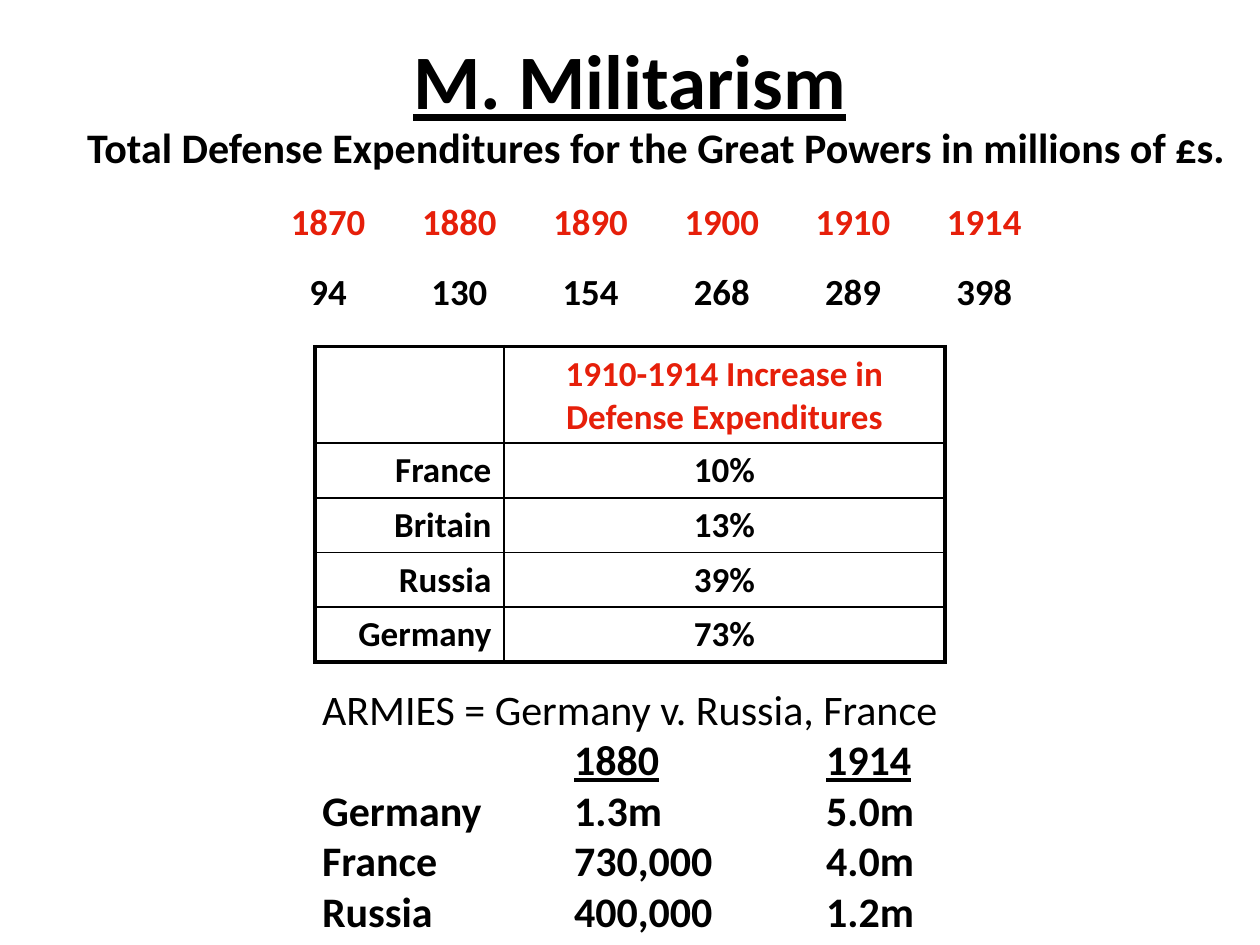
from dataclasses import dataclass

from lxml.etree import SubElement
from pptx import Presentation
from pptx.dml.color import RGBColor
from pptx.enum.text import MSO_ANCHOR as Anchor, MSO_AUTO_SIZE as AutoSize, PP_ALIGN as Align
from pptx.oxml import parse_xml
from pptx.oxml.ns import nsdecls, qn
from pptx.util import Pt


@dataclass(frozen=True)
class Theme:
    font: str = "Calibri"
    ink: str = "000000"
    accent: str = "E61F0A"
    title: float = 44
    body: float = 24
    years: float = 21
    table: float = 20
    outer_line: float = 2.25
    inner_line: float = 1


THEME = Theme()

SPENDING = [
    ("1870", "1880", "1890", "1900", "1910", "1914"),
    ("94", "130", "154", "268", "289", "398"),
]
INCREASE = [
    ("", "1910-1914 Increase in Defense Expenditures"),
    ("France", "10%"),
    ("Britain", "13%"),
    ("Russia", "39%"),
    ("Germany", "73%"),
]
ARMIES = [
    ("Germany", "1.3m", "5.0m"),
    ("France", "730,000", "4.0m"),
    ("Russia", "400,000", "1.2m"),
]


def add_run(paragraph, text, size, color=THEME.ink, bold=True, underline=False):
    run = paragraph.add_run()
    run.text = text
    font = run.font
    font.name, font.size = THEME.font, Pt(size)
    font.bold, font.underline = bold, underline
    font.color.rgb = RGBColor.from_string(color)


def add_text_frame(slide, box):
    frame = slide.shapes.add_textbox(*map(Pt, box)).text_frame
    frame.word_wrap = True
    frame.auto_size = AutoSize.SHAPE_TO_FIT_TEXT
    return frame


def add_plain_table(slide, box, widths, heights):
    """Add a table without style bands, sized by its columns and rows."""
    table = slide.shapes.add_table(len(heights), len(widths), *map(Pt, box)).table
    table.first_row = table.horz_banding = False
    for column, width in zip(table.columns, widths):
        column.width = Pt(width)
    for row, height in zip(table.rows, heights):
        row.height = Pt(height)
    for cell in table.iter_cells():
        cell.fill.background()
    return table


def set_borders(cell, widths):
    """Draw the left, right, top and bottom borders, in that order."""
    properties = cell._tc.get_or_add_tcPr()
    for index, (side, width) in enumerate(zip("LRTB", widths)):
        properties.insert(index, parse_xml(
            f'<a:ln{side} {nsdecls("a")} w="{Pt(width)}"><a:solidFill>'
            f'<a:srgbClr val="{THEME.ink}"/></a:solidFill></a:ln{side}>'))


def set_tab_stops(paragraph, positions):
    tabs = SubElement(paragraph._p.get_or_add_pPr(), qn("a:tabLst"))
    for position in positions:
        SubElement(tabs, qn("a:tab"), pos=str(Pt(position)), algn="l")


def add_title(slide, box):
    title = slide.shapes.title
    title.left, title.top, title.width, title.height = map(Pt, box)
    frame = title.text_frame
    frame.vertical_anchor = Anchor.MIDDLE
    paragraph = frame.paragraphs[0]
    paragraph.alignment = Align.CENTER
    add_run(paragraph, "M. Militarism", THEME.title, underline=True)


def add_subtitle(slide, box):
    paragraph = add_text_frame(slide, box).paragraphs[0]
    paragraph.alignment = Align.CENTER
    add_run(paragraph, "Total Defense Expenditures for the Great Powers in millions of £s.",
            THEME.body)


def add_spending_table(slide, box):
    columns = len(SPENDING[0])
    table = add_plain_table(slide, box, [box[2] / columns] * columns,
                            [box[3] * 0.4, box[3] * 0.6])
    for row, values in enumerate(SPENDING):
        for column, value in enumerate(values):
            cell = table.cell(row, column)
            cell.vertical_anchor = Anchor.MIDDLE
            paragraph = cell.text_frame.paragraphs[0]
            paragraph.alignment = Align.CENTER
            add_run(paragraph, value, THEME.years, THEME.ink if row else THEME.accent)


def add_increase_table(slide, box):
    last_row = len(INCREASE) - 1
    row_height = 31.2
    heights = [box[3] - last_row * row_height] + [row_height] * last_row
    table = add_plain_table(slide, box, [box[2] * 0.3, box[2] * 0.7], heights)
    for row, values in enumerate(INCREASE):
        for column, value in enumerate(values):
            cell = table.cell(row, column)
            on_edge = (column == 0, column == 1, row == 0, row == last_row)
            set_borders(cell, [THEME.outer_line if edge else THEME.inner_line
                               for edge in on_edge])
            if value:
                paragraph = cell.text_frame.paragraphs[0]
                paragraph.alignment = Align.CENTER if column else Align.RIGHT
                add_run(paragraph, value, THEME.table, THEME.ink if row else THEME.accent)


def add_armies(slide, box):
    frame = add_text_frame(slide, box)
    add_run(frame.paragraphs[0], "ARMIES = Germany v. Russia, France", THEME.body, bold=False)
    tab_stops = (144, 288)

    # Year headings, underlined without their tabs
    heading = frame.add_paragraph()
    set_tab_stops(heading, tab_stops)
    for year in ("1880", "1914"):
        add_run(heading, "\t", THEME.body, bold=False)
        add_run(heading, year, THEME.body, underline=True)

    # One line for each country
    for values in ARMIES:
        paragraph = frame.add_paragraph()
        set_tab_stops(paragraph, tab_stops)
        add_run(paragraph, "\t".join(values), THEME.body)


def main():
    presentation = Presentation()
    presentation.slide_width, presentation.slide_height = Pt(720), Pt(540)
    slide = presentation.slides.add_slide(presentation.slide_layouts[5])
    add_title(slide, (36, 0, 648, 90))
    add_spending_table(slide, (150, 111, 450, 78))
    add_subtitle(slide, (15, 66, 720, 36))
    add_increase_table(slide, (180, 198, 360, 180))
    add_armies(slide, (177, 387, 366, 174))
    presentation.save("out.pptx")


if __name__ == "__main__":
    main()
